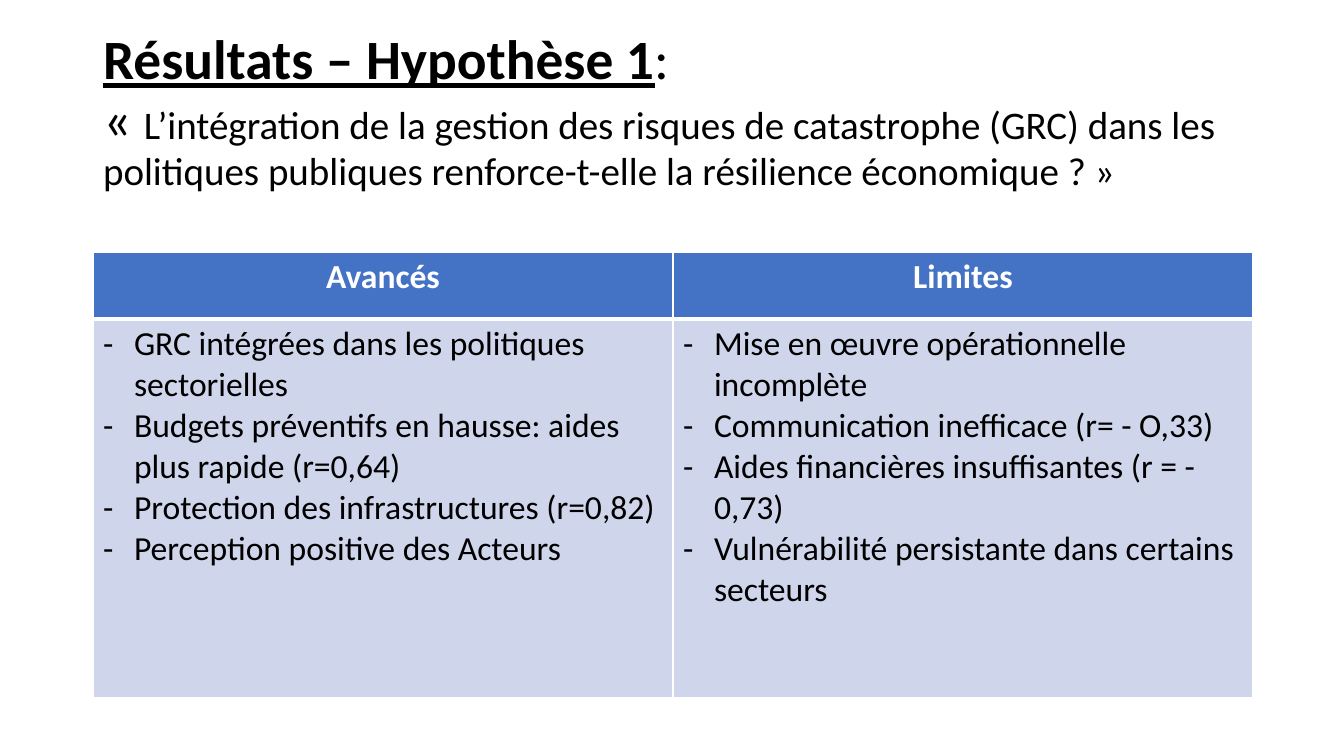
from lxml import etree
from pptx import Presentation
from pptx.dml.color import RGBColor
from pptx.enum.text import MSO_ANCHOR as Anchor, MSO_AUTO_SIZE as Fit, PP_ALIGN as Align
from pptx.oxml import parse_xml
from pptx.oxml.ns import nsdecls, qn
from pptx.util import Emu, Pt

BLACK = RGBColor(0x00, 0x00, 0x00)
WHITE = RGBColor(0xFF, 0xFF, 0xFF)
BLUE = RGBColor(0x44, 0x72, 0xC4)
PALE = RGBColor(0xCF, 0xD5, 0xEA)
FONT = "Calibri"


def px(n):
    return Emu(round(n * 914400 / 100.8))


def style(run, size, color, bold=False):
    font = run.font
    font.name = FONT
    font.size = Pt(size)
    font.color.rgb = color
    font.bold = bold


deck = Presentation()
deck.slide_width, deck.slide_height = px(1344), px(756)
slide = deck.slides.add_slide(deck.slide_layouts[5])

# Title
title = slide.shapes.title
title.left, title.top, title.width, title.height = px(93), px(40), px(1159), px(146)
frame = title.text_frame
frame.word_wrap = True
frame.auto_size = Fit.NONE
frame.vertical_anchor = Anchor.MIDDLE
para = frame.paragraphs[0]
para.alignment = Align.LEFT
para.line_spacing = 0.9
para.text = "Résultats – Hypothèse 1"
head = para.runs[0]
style(head, 39.6, BLACK, True)
head.font.underline = True
colon = para.add_run()
colon.text = ": "
para.add_line_break()
quote = para.add_run()
quote.text = "« "
claim = para.add_run()
claim.text = (
    "L’intégration de la gestion des risques de catastrophe (GRC) dans les "
    "politiques publiques renforce-t-elle la résilience économique ? »"
)
for run, size in ((colon, 39.6), (quote, 39.6), (claim, 27.9)):
    style(run, size, BLACK)

# Table
columns = {
    "Avancés": [
        "GRC intégrées dans les politiques sectorielles",
        "Budgets préventifs en hausse: aides plus rapide (r=0,64)",
        "Protection des infrastructures (r=0,82)",
        "Perception positive des Acteurs",
    ],
    "Limites": [
        "Mise en œuvre opérationnelle incomplète",
        "Communication inefficace (r= - O,33)",
        "Aides financières insuffisantes (r = - 0,73)",
        "Vulnérabilité persistante dans certains secteurs",
    ],
}
table = slide.shapes.add_table(2, 2, px(93), px(252), px(1160), px(446)).table
table.rows[0].height, table.rows[1].height = px(67), px(379)

for col, (label, items) in enumerate(columns.items()):
    table.columns[col].width = px(580)
    top, body = table.cell(0, col), table.cell(1, col)
    top.text = label
    body.text = "\n".join(items)

    for cell, fill, color, bold in ((top, BLUE, WHITE, True), (body, PALE, BLACK, False)):
        cell.fill.solid()
        cell.fill.fore_color.rgb = fill
        for para in cell.text_frame.paragraphs:
            para.alignment = Align.CENTER if bold else Align.LEFT
            style(para.runs[0], 24, color, bold)

        # Thick rule between the header and the lists
        thick = "lnB" if bold else "lnT"
        props = cell._tc.get_or_add_tcPr()
        for spot, side in enumerate(("lnL", "lnR", "lnT", "lnB")):
            width = Pt(3 if side == thick else 1)
            props.insert(spot, parse_xml(
                f'<a:{side} {nsdecls("a")} w="{width}"><a:solidFill>'
                f'<a:srgbClr val="{WHITE}"/></a:solidFill></a:{side}>'))

    for para in body.text_frame.paragraphs:
        props = para._p.get_or_add_pPr()
        props.set("marL", str(px(31)))
        props.set("indent", str(-px(31)))
        etree.SubElement(props, qn("a:buFont")).set("typeface", FONT)
        etree.SubElement(props, qn("a:buChar")).set("char", "-")

deck.save("out.pptx")
